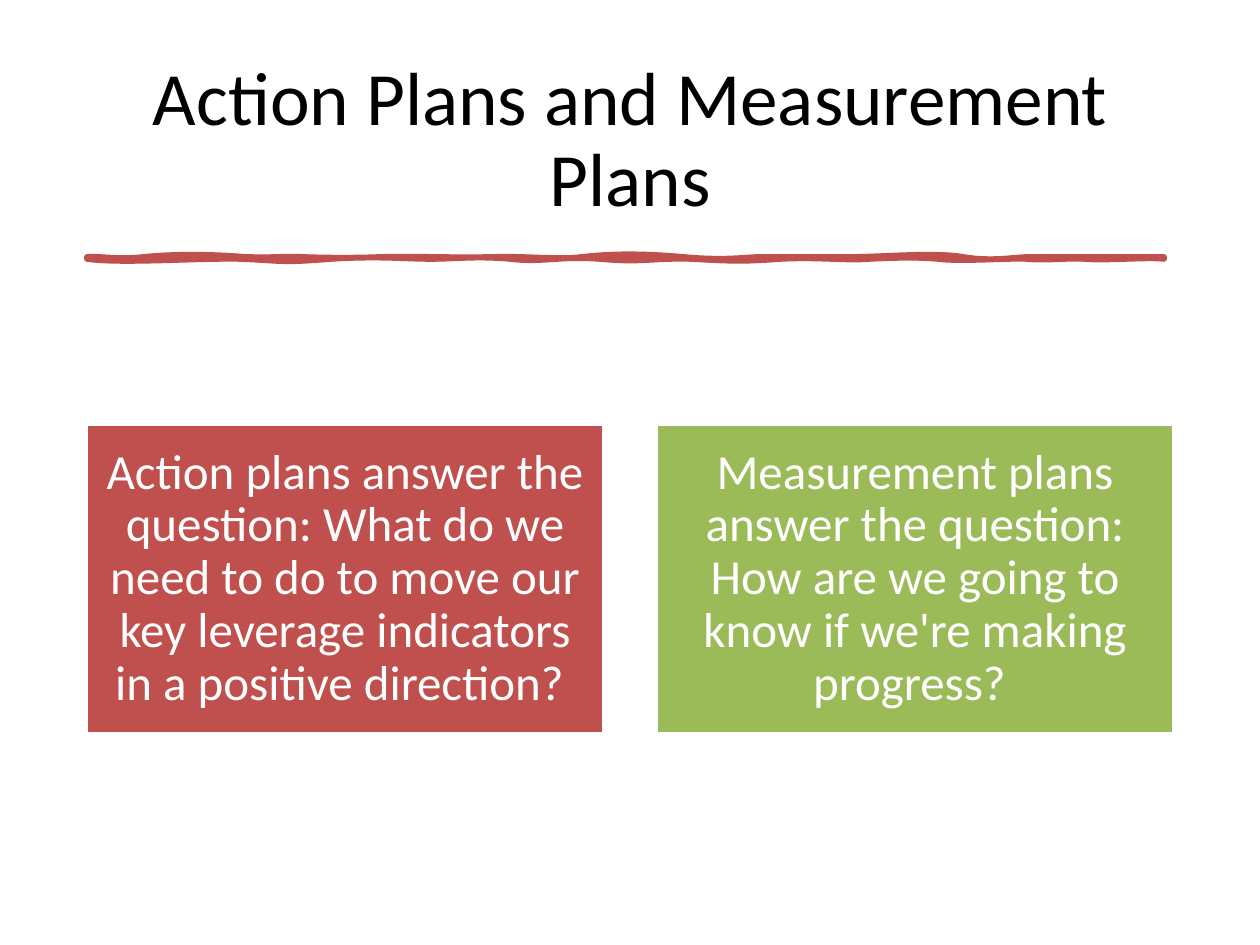
from lxml.etree import SubElement
from pptx import Presentation
from pptx.dml.color import RGBColor
from pptx.enum.shapes import MSO_SHAPE as Shape
from pptx.enum.text import MSO_ANCHOR as Anchor, MSO_AUTO_SIZE as AutoSize, PP_ALIGN as Align
from pptx.oxml.ns import qn
from pptx.util import Emu, Pt

PX = 914400 / 126
BLACK = RGBColor(0x00, 0x00, 0x00)
WHITE = RGBColor(0xFF, 0xFF, 0xFF)
RED = RGBColor(0xC0, 0x50, 0x4D)
GREEN = RGBColor(0x9B, 0xBB, 0x59)
FONT = "Calibri"

TITLE = "Action Plans and Measurement Plans"
CARDS = [
    ("Action plans answer the question: What do we need to do to move our "
     "key leverage indicators in a positive direction? ", RED),
    ("Measurement plans answer the question: How are we going to know if "
     "we're making progress? ", GREEN),
]

TOP_EDGE = [
    ((16, -1), (29, 3), (57, 0)),
    ((86, -3), (122, -3), (158, 0)),
    ((193, 1), (190, -1), (215, 0)),
    ((241, 1), (271, 1), (294, 0)),
    ((316, -1), (369, 1), (406, 0)),
    ((442, -1), (470, 3), (495, 0)),
    ((522, -3), (551, -4), (596, 0)),
    ((640, 4), (658, 0), (675, 0)),
    ((692, 0), (732, 0), (765, 0)),
    ((796, 0), (847, -5), (876, 0)),
    ((906, 5), (926, 0), (944, 0)),
    ((961, 0), (1019, 0), (1077, 0)),
]
BOTTOM_EDGE = [
    ((1077, 1), (1077, 1), (1077, 2)),
    ((1061, 0), (1018, 4), (998, 2)),
    ((978, 1), (958, 4), (940, 2)),
    ((924, 1), (873, 5), (851, 2)),
    ((828, 0), (806, 1), (782, 2)),
    ((760, 4), (732, 0), (693, 2)),
    ((654, 5), (641, 4), (604, 2)),
    ((564, 1), (556, 6), (513, 2)),
    ((470, -1), (457, 6), (423, 2)),
    ((389, -1), (369, 2), (344, 2)),
    ((318, 2), (292, -1), (244, 2)),
    ((195, 6), (197, 4), (154, 2)),
    ((111, 1), (34, 7), (0, 2)),
]


def px(value):
    return Emu(round(value * PX))


def format_text(text_frame, text, size, color):
    text_frame.text = text
    text_frame.word_wrap = True
    text_frame.auto_size = AutoSize.NONE
    text_frame.vertical_anchor = Anchor.MIDDLE
    paragraph = text_frame.paragraphs[0]
    paragraph.alignment = Align.CENTER
    paragraph.line_spacing = 0.9
    font = paragraph.runs[0].font
    font.name = FONT
    font.size = Pt(size)
    font.color.rgb = color


def add_title(slide, left, top, width, height):
    title = slide.shapes.title
    title.left, title.top = px(left), px(top)
    title.width, title.height = px(width), px(height)
    format_text(title.text_frame, TITLE, 43, BLACK)


def bend_segments(shape):
    segments = list(shape._element.iter(qn("a:lnTo")))
    for index in range(0, len(segments), 3):
        curve = segments[index]
        bezier = SubElement(curve.getparent(), qn("a:cubicBezTo"))
        curve.addprevious(bezier)
        for segment in segments[index:index + 3]:
            bezier.append(segment[0])
            segment.getparent().remove(segment)


def add_brush_rule(slide, left, top):
    builder = slide.shapes.build_freeform(px(left), px(top))
    points = [point for curve in TOP_EDGE + BOTTOM_EDGE for point in curve]
    builder.add_line_segments([(px(left + x), px(top + y)) for x, y in points], close=True)
    rule = builder.convert_to_shape()
    bend_segments(rule)
    rule.shadow.inherit = False
    rule.fill.solid()
    rule.fill.fore_color.rgb = RED
    rule.line.color.rgb = RED
    rule.line.width = Pt(3.25)


def add_card(slide, left, top, width, height, text, color):
    card = slide.shapes.add_shape(Shape.RECTANGLE, px(left), px(top), px(width), px(height))
    card.shadow.inherit = False
    card.fill.solid()
    card.fill.fore_color.rgb = color
    card.line.color.rgb = WHITE
    card.line.width = Pt(2)
    text_frame = card.text_frame
    text_frame.margin_left = text_frame.margin_right = px(15)
    text_frame.margin_top = text_frame.margin_bottom = px(15)
    format_text(text_frame, text, 28, WHITE)


def add_cards(slide, left, top, width, height, gap):
    card_width = (width - gap * (len(CARDS) - 1)) // len(CARDS)
    for index, (text, color) in enumerate(CARDS):
        card_left = left + index * (card_width + gap)
        add_card(slide, card_left, top, card_width, height, text, color)


def main():
    presentation = Presentation()
    presentation.slide_width, presentation.slide_height = px(1260), px(945)
    slide = presentation.slides.add_slide(presentation.slide_layouts[5])
    add_title(slide, 87, 50, 1086, 183)
    add_brush_rule(slide, 87, 257)
    add_cards(slide, 86, 424, 1088, 310, 52)
    presentation.save("out.pptx")


if __name__ == "__main__":
    main()
